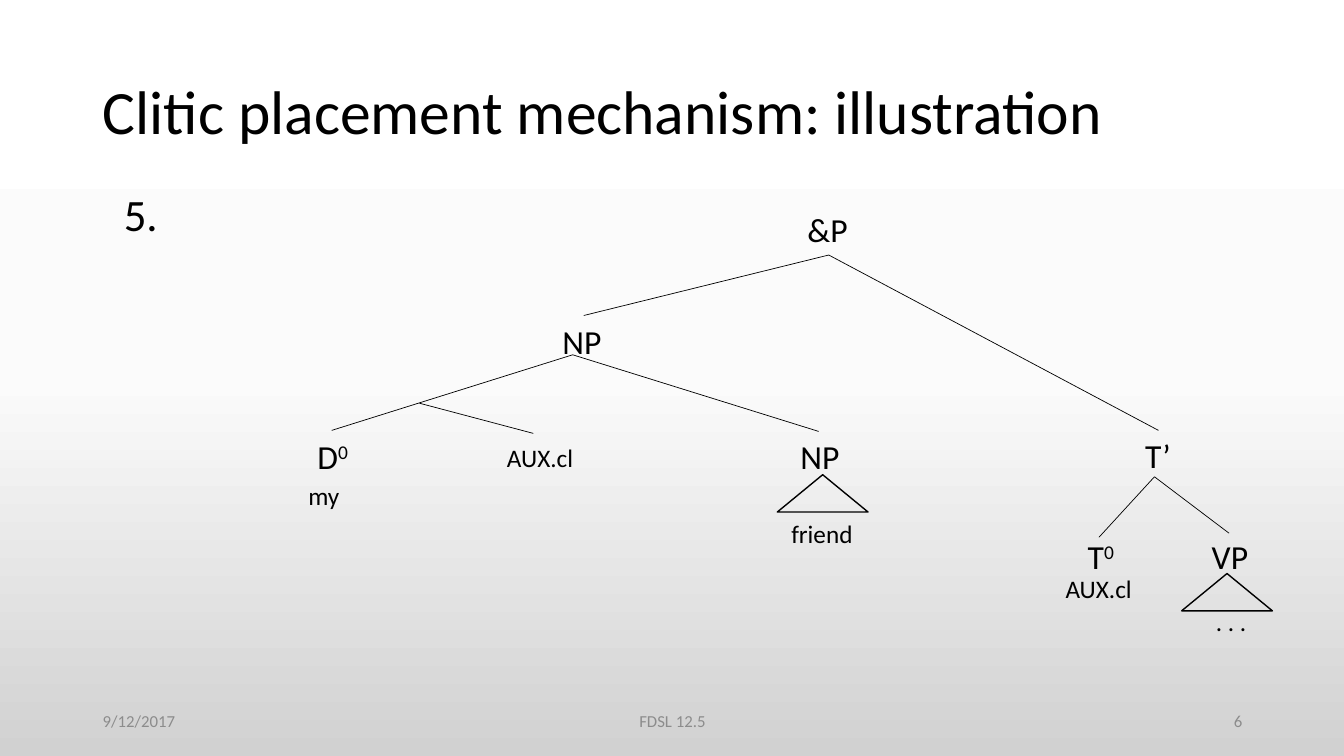
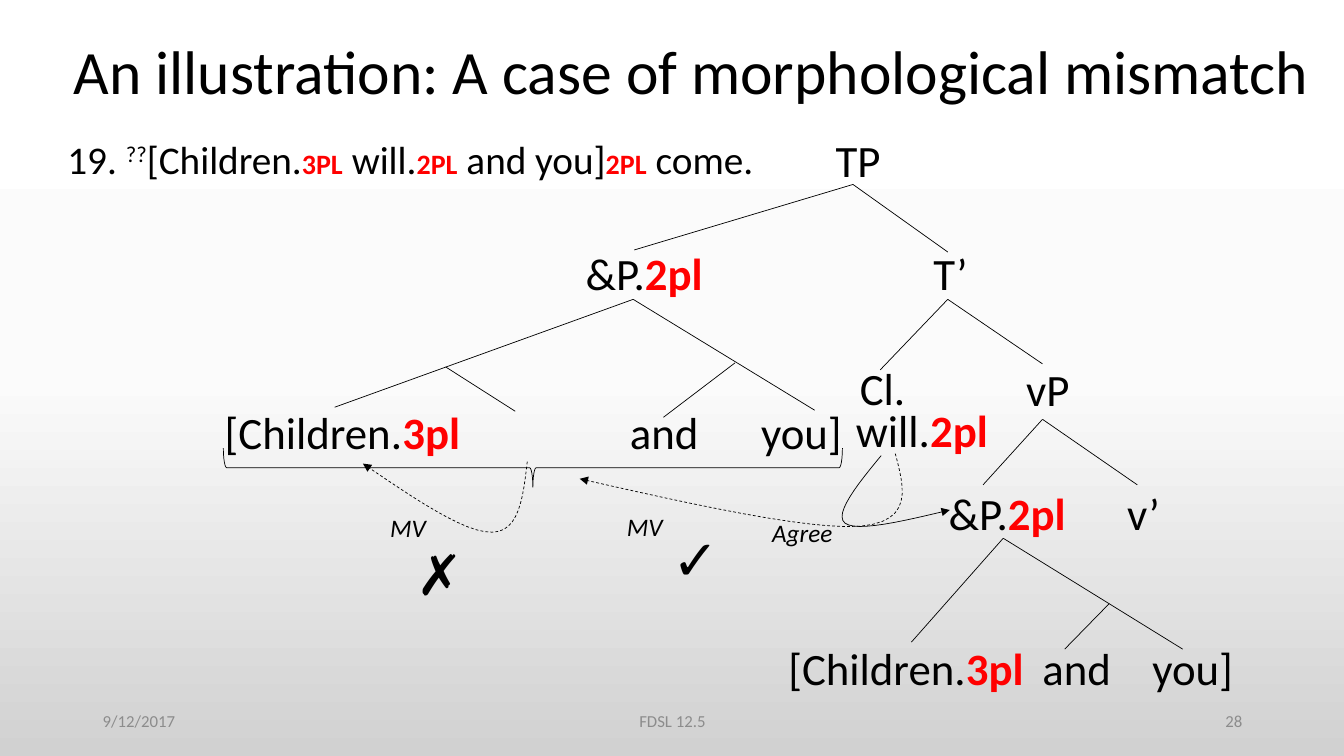
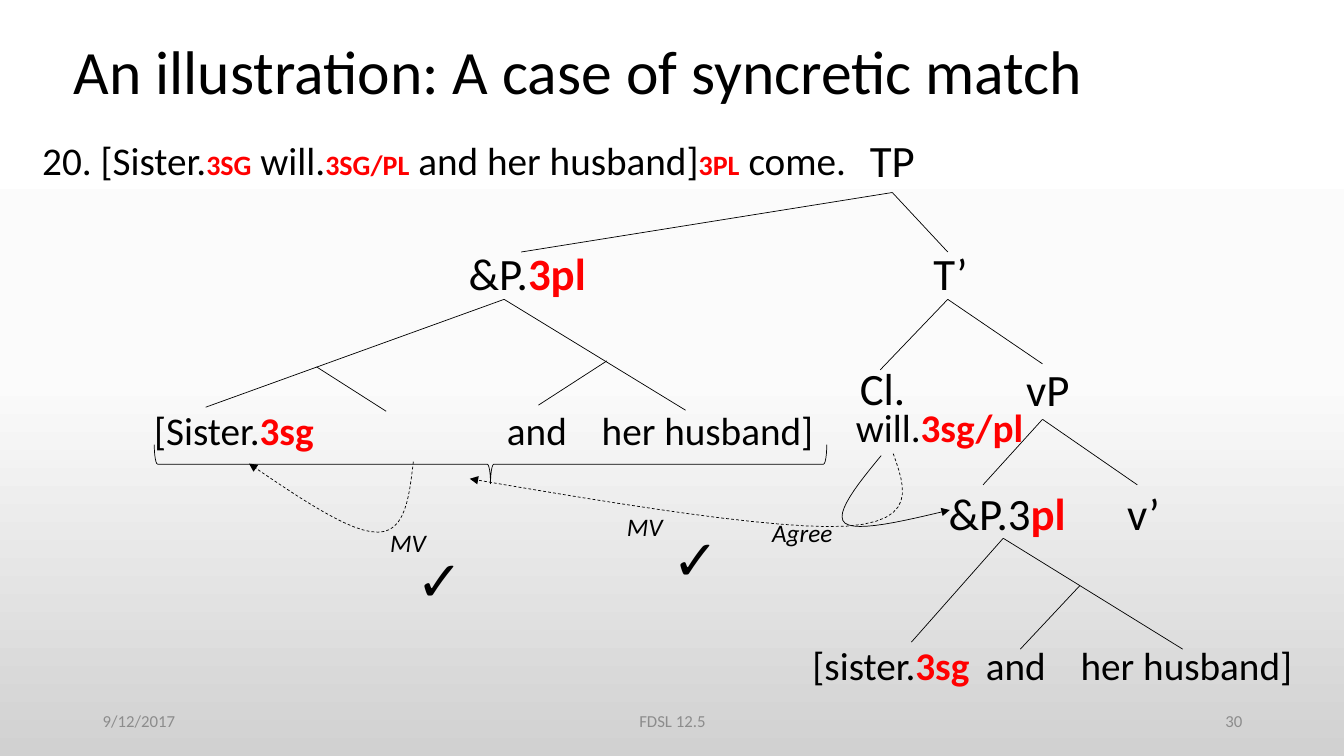
"""Build three slides of syntax trees on clitic placement and agreement."""
from copy import deepcopy

from pptx import Presentation
from pptx.dml.color import RGBColor
from pptx.enum.dml import MSO_LINE
from pptx.enum.shapes import MSO_CONNECTOR, MSO_SHAPE
from pptx.enum.text import MSO_ANCHOR, MSO_AUTO_SIZE, PP_ALIGN
from pptx.oxml import parse_xml
from pptx.oxml.ns import nsdecls, qn
from pptx.util import Cm, Pt

STRAIGHT = MSO_CONNECTOR.STRAIGHT
TRIANGLE, BRACE = MSO_SHAPE.ISOSCELES_TRIANGLE, MSO_SHAPE.RIGHT_BRACE
DASH = MSO_LINE.DASH
MIDDLE = MSO_ANCHOR.MIDDLE
LEFT, CENTER, RIGHT = PP_ALIGN.LEFT, PP_ALIGN.CENTER, PP_ALIGN.RIGHT
NO_FIT = MSO_AUTO_SIZE.NONE

FONT = "Calibri"
BLACK = RGBColor(0x00, 0x00, 0x00)
RED = RGBColor(0xFF, 0x00, 0x00)
GREY = RGBColor(0x8C, 0x8C, 0x8C)
BACKDROP = [(0, RGBColor(0xFF, 0xFF, 0xFF)), (0.5, RGBColor(0xFB, 0xFB, 0xFB)),
            (1, RGBColor(0xD1, 0xD1, 0xD1))]
THIN = 0.5
CURVE_STEPS = 12


def red(text, **style):
    return text, {"color": RED, "bold": True, **style}


def raised(text):
    return text, {"raised": True}


def italic(text):
    return text, {"italic": True}


PLACEMENT = {
    "title": "Clitic placement mechanism: illustration",
    "title_box": (0.92, 0.41, 11.71, 1.45),
    "number": "6",
    "labels": [
        (1.13, 1.8, 32, ["5."]),
        (7.91, 2.02, 24, ["&P"]),
        (5.48, 3.13, 24, ["NP"]),
        (3.05, 4.28, 24, ["D", raised("0")]),
        (2.96, 4.72, 18, ["my"]),
        (4.93, 4.34, 18, ["AUX.cl"]),
        (7.84, 4.28, 24, ["NP"]),
        (7.75, 5.09, 18, ["friend"]),
        (11.26, 4.27, 24, ["T’"]),
        (10.69, 5.27, 24, ["T", raised("0")]),
        (10.47, 5.64, 18, ["AUX.cl"]),
        (11.92, 5.27, 24, ["VP"]),
        (11.96, 5.97, 18, [". . ."]),
    ],
    "branches": [
        ((8.22, 2.53), [(5.79, 3.13), (11.49, 4.27)]),
        ((5.68, 3.52), [(3.29, 4.27), (8.12, 4.28)]),
        ((4.16, 4), [(5.29, 4.3)]),
        ((11.45, 4.73), [(10.9, 5.33), (12.19, 5.29)]),
    ],
    "triangles": [(7.71, 4.71), (11.72, 5.69)],
}

CLAUSE_LABELS = [
    (9.16, 2.39, 32, ["T’"]),
    (8.43, 3.53, 32, ["Cl."]),
    (10.08, 3.54, 32, ["vP"]),
    (11.08, 4.77, 32, ["v’"]),
    (7.56, 5.08, 18, [italic("Agree")]),
    (6.12, 5.02, 18, [italic("MV")]),
    (6.57, 5.15, 40, ["✓"]),
]
CLAUSE_BRANCHES = [
    ((9.4, 2.97), [(8.73, 3.67), (10.34, 3.61)]),
    ((10.34, 4.16), [(9.75, 4.81), (11.28, 4.81)]),
    ((9.95, 5.34), [(9.04, 6.37), (11.73, 6.44)]),
]
AGREE_CURVE = [(8.74, 4.52), (8.5, 4.81), (8.27, 5.1), (8.38, 5.19),
               (8.5, 5.28), (8.96, 5.17), (9.42, 5.06)]
SUBJECT_APEX_Y = 2.97
SUBJECT_BRANCHES = [
    ((0, 0), [(-2.96, 1.07), (1.8, 1.1)]),
    ((-1.86, 0.67), [(-1.17, 1.11)]),
]
MOVE_OFFSETS = [(0, 0), (-0.04, 0.35), (-0.08, 0.7), (-0.35, 0.7),
                (-0.62, 0.71), (-1.13, 0.36), (-1.63, 0.02)]

MISMATCH = {
    "title": "An illustration: A case of morphological mismatch",
    "title_box": (0.63, 0.01, 12.55, 1.45),
    "number": "28",
    "example": (0.57, 1.29, 7.2, [
        "19. ", raised("??"), "[Children.", red("3PL", size=20), " will.",
        red("2PL", size=20), " and you]", red("2PL", size=20), " come."]),
    "labels": [
        (8.19, 1.27, 32, ["TP"]),
        (5.71, 2.39, 32, ["&P.", red("2pl")]),
        (2.13, 3.97, 32, ["[Children.", red("3pl")]),
        (6.15, 3.97, 32, ["and"]),
        (7.45, 3.97, 32, ["you]"]),
        (8.39, 3.95, 32, ["will.", red("2pl")]),
        (9.31, 4.77, 32, ["&P.", red("2pl")]),
        (7.72, 6.31, 32, ["[Children.", red("3pl")]),
        (10.24, 6.31, 32, ["and"]),
        (11.33, 6.31, 32, ["you]"]),
        (3.77, 5.03, 18, [italic("MV")]),
        (4.03, 5.3, 40, ["✗"]),
    ],
    "branches": [
        ((8.46, 1.83), [(6.29, 2.48), (9.4, 2.5)]),
        ((7.29, 3.6), [(6.58, 4.14)]),
        ((11, 5.99), [(10.56, 6.44)]),
    ],
    "subject_x": 6.28,
    "move_start": (5.23, 4.58),
    "raising_curve": [(8.88, 4.5), (8.97, 4.84), (9.06, 5.17), (8.54, 5.22),
                      (8.02, 5.26), (6.89, 5.01), (5.75, 4.75)],
    "brace": (5.09, 1.57, 0.39, 6.14),
}

SYNCRETISM = {
    "title": "An illustration: A case of syncretic match",
    "title_box": (0.63, 0.01, 11.71, 1.45),
    "number": "30",
    "example": (0.32, 1.3, 8.41, [
        "20. [Sister.", red("3SG", size=20), " will.", red("3SG/PL", size=20),
        " and her husband]", red("3PL", size=20), " come."]),
    "labels": [
        (8.53, 1.27, 32, ["TP"]),
        (4.55, 2.39, 32, ["&P.", red("3pl")]),
        (1.43, 3.98, 28, ["[Sister.", red("3sg")]),
        (4.93, 3.98, 28, ["and"]),
        (5.87, 3.98, 28, ["her husband]"]),
        (8.39, 3.95, 28, ["will.", red("3sg/pl")]),
        (9.31, 4.77, 32, ["&P.3", red("pl")]),
        (7.96, 6.31, 28, ["[sister.", red("3sg")]),
        (9.68, 6.31, 28, ["and"]),
        (10.62, 6.31, 28, ["her husband]"]),
        (3.77, 5.18, 18, [italic("MV")]),
        (4.03, 5.36, 40, ["✓"]),
    ],
    "branches": [
        ((8.85, 1.91), [(5.17, 2.5), (9.4, 2.5)]),
        ((6.02, 3.58), [(5.34, 4.02)]),
        ((10.71, 5.81), [(10.12, 6.44)]),
    ],
    "subject_x": 5,
    "move_start": (4.1, 4.58),
    "raising_curve": [(8.86, 4.5), (8.98, 4.84), (9.1, 5.17), (8.4, 5.22),
                      (7.7, 5.26), (6.18, 5.01), (4.66, 4.75)],
    "brace": (4.67, 1.27, 0.39, 6.67),
}


def emu(*inches):
    return [Cm(value * 2.54) for value in inches]


def shifted(points, origin):
    return [(origin[0] + x, origin[1] + y) for x, y in points]


def paint_background(master):
    fill = master.background.fill
    fill.gradient()
    fill.gradient_angle = 270
    stop_list = master.element.find(".//" + qn("a:gsLst"))
    stop_list.insert(1, deepcopy(stop_list[0]))
    for stop, (position, color) in zip(fill.gradient_stops, BACKDROP):
        stop.position = position
        stop.color.rgb = color


def write(paragraph, runs, size, color=BLACK):
    for item in runs:
        text, style = (item, {}) if isinstance(item, str) else item
        run = paragraph.add_run()
        run.text = text
        font = run.font
        font.name = FONT
        font.size = Pt(style.get("size", size))
        font.color.rgb = style.get("color", color)
        font.bold = style.get("bold", False)
        font.italic = style.get("italic", False)
        if style.get("raised"):
            run._r.get_or_add_rPr().set("baseline", "30000")


def add_text(slide, box, runs, size, color=BLACK, align=LEFT):
    frame = slide.shapes.add_textbox(*emu(*box)).text_frame
    frame.word_wrap = True
    paragraph = frame.paragraphs[0]
    paragraph.alignment = align
    write(paragraph, runs, size, color)
    return frame


def line_height(size):
    return 0.1 + size * 1.22 / 72


def add_label(slide, x, y, size, runs):
    letters = sum(len(run if isinstance(run, str) else run[0]) for run in runs)
    width = 0.35 + letters * size / 144
    add_text(slide, (x, y, width, line_height(size)), runs, size)


def draw_line(shape, width):
    shape.line.color.rgb = BLACK
    shape.line.width = Pt(width)


def add_outline(slide, kind, box, width):
    shape = slide.shapes.add_shape(kind, *emu(*box))
    shape.shadow.inherit = False
    shape.fill.background()
    draw_line(shape, width)
    return shape


def add_branches(slide, branches):
    for apex, ends in branches:
        for end in ends:
            branch = slide.shapes.add_connector(STRAIGHT, *emu(*apex, *end))
            draw_line(branch, THIN)
            branch._element.spPr.append(parse_xml(f"<a:effectLst {nsdecls('a')}/>"))


def bezier(start, first, second, end, t):
    weights = ((1 - t) ** 3, 3 * t * (1 - t) ** 2, 3 * t * t * (1 - t), t ** 3)
    corners = (start, first, second, end)
    return [sum(w * corner[axis] for w, corner in zip(weights, corners))
            for axis in (0, 1)]


def add_curved_arrow(slide, points, dashed=True):
    track = [emu(*bezier(*points[i:i + 4], step / CURVE_STEPS))
             for i in range(0, len(points) - 1, 3)
             for step in range(1, CURVE_STEPS + 1)]
    builder = slide.shapes.build_freeform(*emu(*points[0]))
    builder.add_line_segments(track, close=False)
    arrow = builder.convert_to_shape()
    arrow.shadow.inherit = False
    arrow.fill.background()
    draw_line(arrow, THIN)
    if dashed:
        arrow.line.dash_style = DASH
    arrow.line._get_or_add_ln().append(
        parse_xml(f'<a:tailEnd {nsdecls("a")} type="triangle"/>'))


def add_slide(prs, content):
    slide = prs.slides.add_slide(prs.slide_layouts.get_by_name("Title Only"))
    title = slide.shapes.title
    title.left, title.top, title.width, title.height = emu(*content["title_box"])
    frame = title.text_frame
    frame.word_wrap = True
    frame.auto_size = NO_FIT
    frame.vertical_anchor = MIDDLE
    heading = frame.paragraphs[0]
    heading.alignment = LEFT
    heading.line_spacing = 0.9
    write(heading, [content["title"]], 44)
    footers = [(0.92, 3, "9/12/2017", LEFT), (4.42, 4.5, "FDSL 12.5", CENTER),
               (9.42, 3, content["number"], RIGHT)]
    for x, width, text, align in footers:
        footer = add_text(slide, (x, 6.95, width, 0.4), [text], 12, GREY, align)
        footer.vertical_anchor = MIDDLE
    for label in content["labels"]:
        add_label(slide, *label)
    add_branches(slide, content["branches"])
    return slide


def add_placement_slide(prs):
    slide = add_slide(prs, PLACEMENT)
    for corner in PLACEMENT["triangles"]:
        add_outline(slide, TRIANGLE, (*corner, 0.9, 0.37), 1)


def add_agreement_slide(prs, content):
    slide = add_slide(prs, content)
    x, y, width, runs = content["example"]
    add_text(slide, (x, y, width, line_height(28)), runs, 28)
    for label in CLAUSE_LABELS:
        add_label(slide, *label)
    apex = (content["subject_x"], SUBJECT_APEX_Y)
    subject = [(shifted([top], apex)[0], shifted(ends, apex))
               for top, ends in SUBJECT_BRANCHES]
    add_branches(slide, CLAUSE_BRANCHES + subject)
    add_outline(slide, BRACE, content["brace"], THIN).rotation = 90
    add_curved_arrow(slide, AGREE_CURVE, dashed=False)
    add_curved_arrow(slide, content["raising_curve"])
    add_curved_arrow(slide, shifted(MOVE_OFFSETS, content["move_start"]))


def main():
    prs = Presentation()
    prs.slide_width, prs.slide_height = emu(13.33, 7.5)
    paint_background(prs.slide_master)
    add_placement_slide(prs)
    for content in (MISMATCH, SYNCRETISM):
        add_agreement_slide(prs, content)
    prs.save("out.pptx")


if __name__ == "__main__":
    main()
